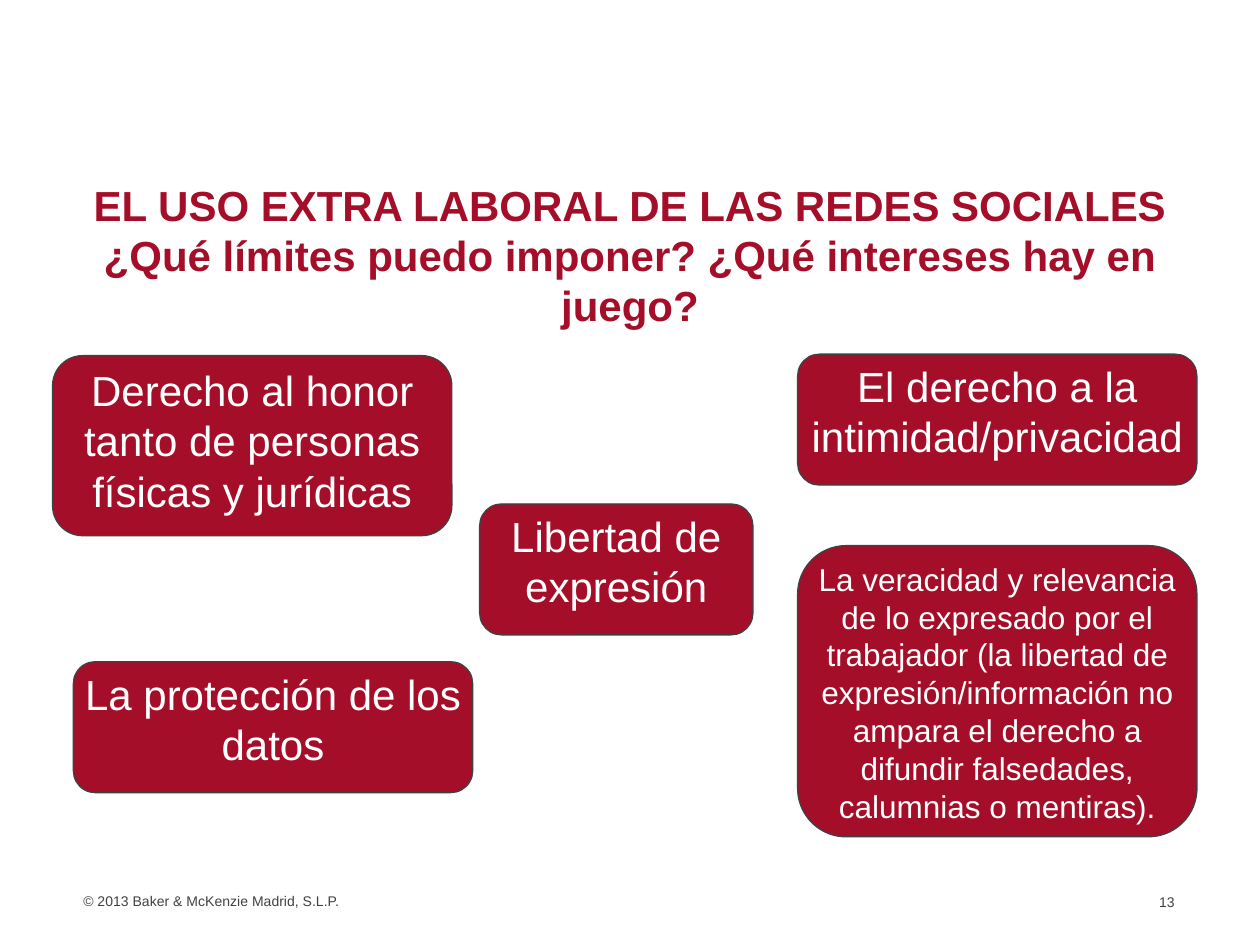
from dataclasses import dataclass

from pptx import Presentation
from pptx import util as u
from pptx.dml.color import RGBColor
from pptx.enum import shapes, text


@dataclass(frozen=True)
class Theme:
    """Colours, font and type sizes of the slide."""
    red: RGBColor = RGBColor(0xA5, 0x0E, 0x29)
    gray: RGBColor = RGBColor(0x40, 0x41, 0x43)
    white: RGBColor = RGBColor(0xFF, 0xFF, 0xFF)
    font: str = "Arial"
    large: int = 24
    medium: int = 18
    small: int = 8


THEME = Theme()
ALIGN = text.PP_ALIGN
ANCHOR = text.MSO_ANCHOR
WIDE, NARROW, LOW = 8.05, 5.51, 2.64
RIGHT_COLUMN = 16.08

INTERESTS = [
    ("El derecho a la intimidad/privacidad",
     (RIGHT_COLUMN, 7.14, WIDE, LOW), THEME.large),
    ("La veracidad y relevancia de lo expresado por el trabajador "
     "(la libertad de expresión/información no ampara el derecho a "
     "difundir falsedades, calumnias o mentiras).",
     (RIGHT_COLUMN, 11, WIDE, 5.87), THEME.medium),
    ("Libertad de expresión", (9.67, 10.16, NARROW, LOW), THEME.large),
    ("Derecho al honor tanto de personas físicas y jurídicas",
     (1.06, 7.17, WIDE, 3.63), THEME.large),
    ("La protección de los datos", (1.48, 13.34, WIDE, LOW), THEME.large),
]


def to_cm(box):
    """Convert a left, top, width, height box to lengths."""
    return [u.Cm(value) for value in box]


def write(shape, content, size, color, align=ALIGN.CENTER, anchor=ANCHOR.TOP,
          insets=(0, 0, 0, 0), bold=False):
    """Put one formatted paragraph into a shape."""
    frame = shape.text_frame
    frame.text = content
    frame.word_wrap = True
    frame.auto_size = text.MSO_AUTO_SIZE.NONE
    frame.vertical_anchor = anchor
    (frame.margin_left, frame.margin_top,
     frame.margin_right, frame.margin_bottom) = to_cm(insets)
    paragraph = frame.paragraphs[0]
    paragraph.alignment = align
    paragraph.line_spacing = 1.0
    paragraph.space_before = u.Pt(0)
    font = paragraph.runs[0].font
    font.name, font.size, font.bold = THEME.font, u.Pt(size), bold
    font.color.rgb = color


def add_title(slide, content, box):
    """Place and fill the title placeholder."""
    title = slide.shapes.title
    title.left, title.top, title.width, title.height = to_cm(box)
    write(title, content, THEME.large, THEME.red, bold=True)


def add_interest(slide, content, box, size):
    """Add a red rounded box naming one interest at stake."""
    shape = slide.shapes.add_shape(
        shapes.MSO_SHAPE.ROUNDED_RECTANGLE, *to_cm(box))
    shape.shadow.inherit = False
    shape.fill.solid()
    shape.fill.fore_color.rgb = THEME.red
    shape.line.color.rgb = THEME.gray
    shape.line.width = u.Pt(0.75)
    write(shape, content, size, THEME.white)


def add_footer(slide, content, box, **layout):
    """Add a small gray footer text."""
    shape = slide.shapes.add_textbox(*to_cm(box))
    write(shape, content, THEME.small, THEME.gray, **layout)


def main():
    """Build and save the slide."""
    presentation = Presentation()
    presentation.slide_width, presentation.slide_height = u.Cm(25.4), u.Cm(19.05)
    slide = presentation.slides.add_slide(presentation.slide_layouts[5])
    add_footer(slide, "© 2013 Baker & McKenzie Madrid, S.L.P.",
               (1.68, 17.99, 22, 0.33), align=ALIGN.LEFT)
    add_footer(slide, "13", (21.8, 17.16, 1.88, 1.32), align=ALIGN.RIGHT,
               anchor=ANCHOR.BOTTOM, insets=(0.25, 0.13, 0, 0.13))
    add_title(slide, "EL USO EXTRA LABORAL DE LAS REDES SOCIALES ¿Qué límites "
              "puedo imponer? ¿Qué intereses hay en juego?",
              (1.7, 3.61, 22, 1.35))
    for content, box, size in INTERESTS:
        add_interest(slide, content, box, size)
    presentation.save("out.pptx")


if __name__ == "__main__":
    main()
